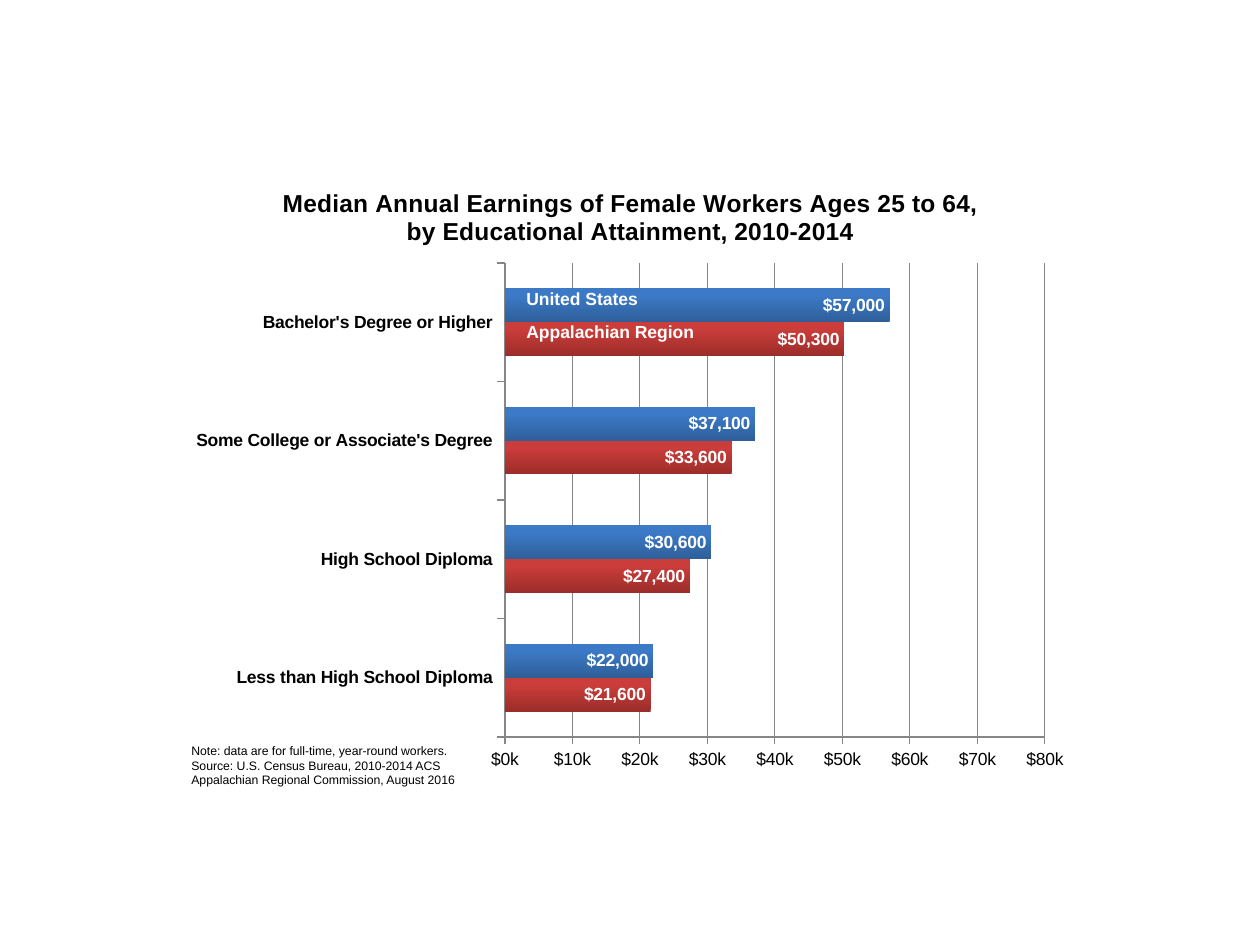
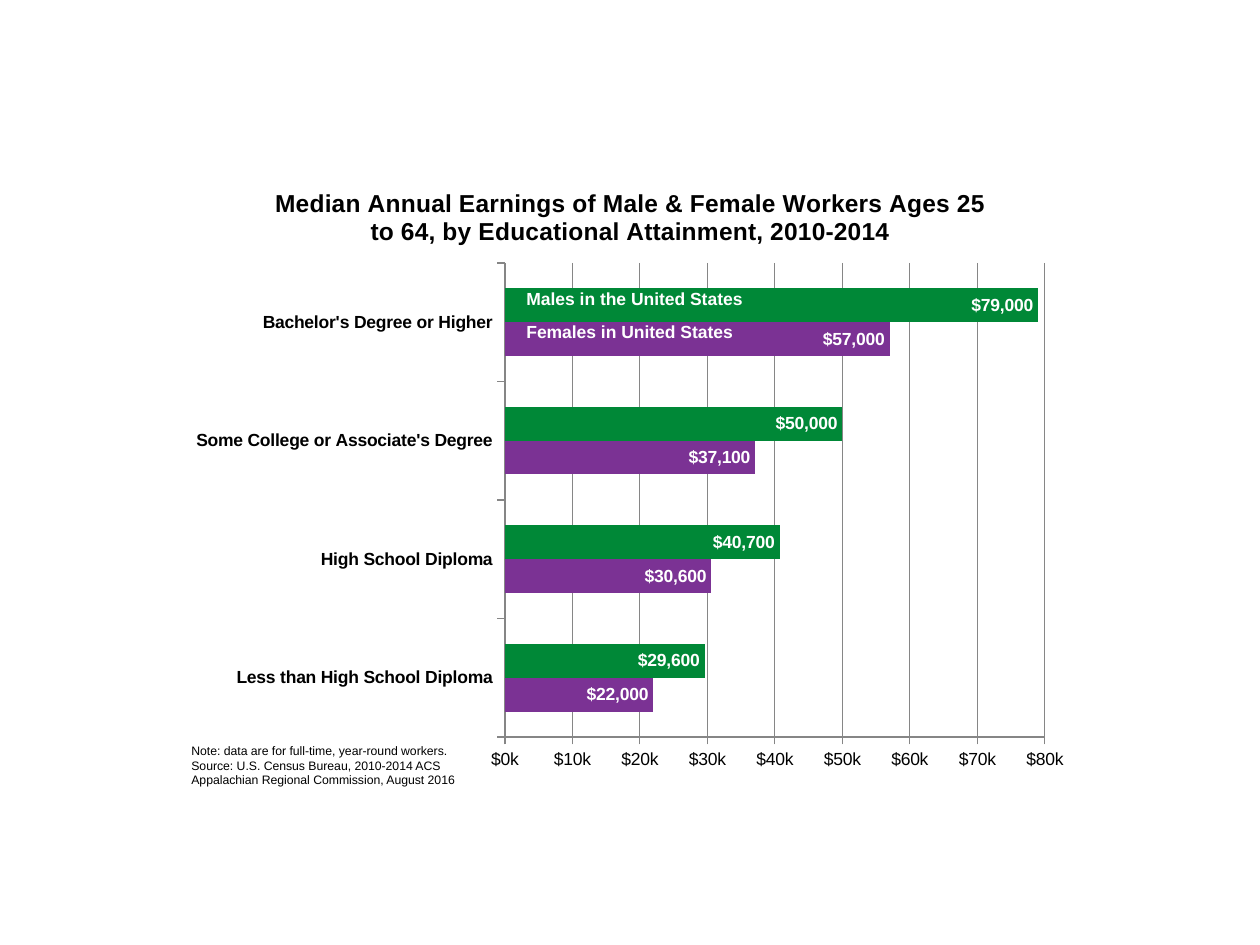
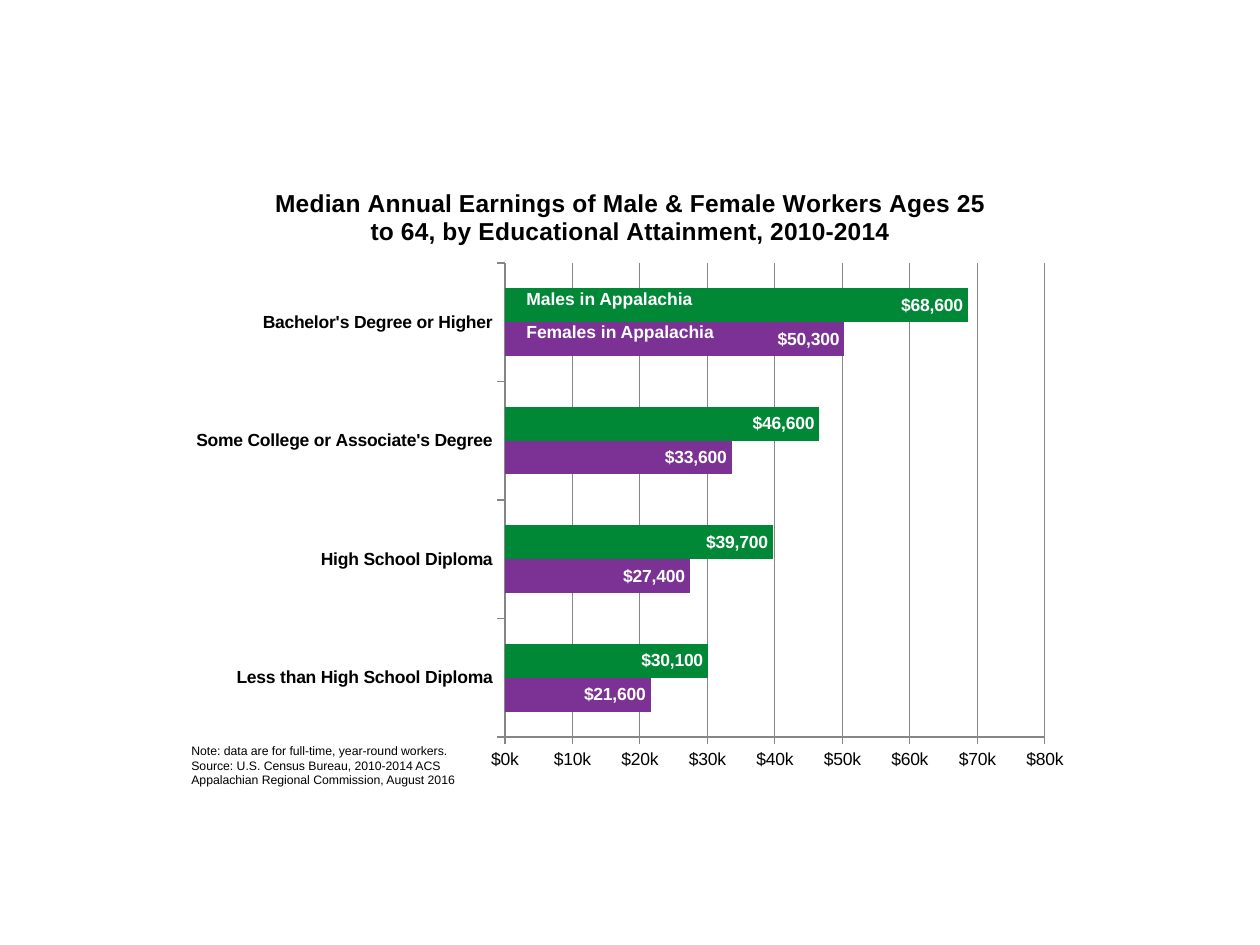
from dataclasses import dataclass

from lxml.etree import SubElement
from pptx import Presentation
from pptx.chart.data import CategoryChartData
from pptx.dml.color import RGBColor
from pptx.enum.chart import XL_CHART_TYPE, XL_LABEL_POSITION, XL_TICK_MARK
from pptx.oxml.ns import qn
from pptx.util import Emu, Pt

LEVELS = ["Less than High School Diploma", "High School Diploma",
          "Some College or Associate's Degree", "Bachelor's Degree or Higher"]
NOTES = ["Note: data are for full-time, year-round workers.",
         "Source: U.S. Census Bureau, 2010-2014 ACS",
         "Appalachian Regional Commission, August 2016"]
TITLE = "Median Annual Earnings of {} Workers Ages 25 to 64, by Educational Attainment, 2010-2014"
US_WOMEN = [22000, 30600, 37100, 57000]
APPALACHIAN_WOMEN = [21600, 27400, 33600, 50300]
SLIDES = [
    {"who": "Female", "bars": [
        ("Appalachian Region", APPALACHIAN_WOMEN, "red"),
        ("United States", US_WOMEN, "blue")]},
    {"who": "Male & Female", "bars": [
        ("Females in United States", US_WOMEN, "purple"),
        ("Males in the United States", [29600, 40700, 50000, 79000], "green")]},
    {"who": "Male & Female", "bars": [
        ("Females in Appalachia", APPALACHIAN_WOMEN, "purple"),
        ("Males in Appalachia", [30100, 39700, 46600, 68600], "green")]},
]


@dataclass(frozen=True)
class Theme:
    font: str = "Arial"
    text: str = "000000"
    label: str = "FFFFFF"
    grid: str = "868686"
    red: tuple = ("9B2D2A", "CB3D3A")
    blue: tuple = ("2E5F99", "3C7AC7")
    purple: tuple = ("7B3294",)
    green: tuple = ("008837",)
    title_size: int = 14
    body_size: int = 10
    note_size: int = 7


T = Theme()
CHART = (179, 164, 903, 617)
PLOT = (505, 263, 540, 474)
BAR_NAMES = [(514, 315, 252, 34), (514, 282, 252, 26)]
NOTE_BOX = (179, 737, 323, 63)


def px(n):
    return Emu(round(n * 914400 / 126))


def style(font, size, color=T.text, bold=False):
    for key, value in {"name": T.font, "size": Pt(size), "bold": bold}.items():
        setattr(font, key, value)
    font.color.rgb = RGBColor.from_string(color)


def add_text(s, box, lines, size, color=T.text, bold=False):
    tf = s.shapes.add_textbox(*map(px, box)).text_frame
    tf.word_wrap = True
    tf.text = "\n".join(lines)
    for p in tf.paragraphs:
        style(p.runs[0].font, size, color, bold)


def paint(fill, colors):
    if len(colors) == 1:
        fill.solid()
        fill.fore_color.rgb = RGBColor.from_string(colors[0])
        return
    fill.gradient()
    fill.gradient_angle = 90
    for stop, color, position in zip(fill.gradient_stops, colors, (0, 0.8)):
        stop.color.rgb = RGBColor.from_string(color)
        stop.position = position


def place_plot(chart):
    area = chart._chartSpace.chart.plotArea
    for old in area.findall(qn("c:layout")):
        area.remove(old)
    layout = SubElement(area, qn("c:layout"))
    area.insert(0, layout)
    manual = SubElement(layout, qn("c:manualLayout"))
    left, top, width, height = CHART
    x, y, w, h = PLOT
    parts = {"layoutTarget": "inner", "xMode": "edge", "yMode": "edge",
             "x": (x - left) / width, "y": (y - top) / height,
             "w": w / width, "h": h / height}
    for tag, value in parts.items():
        SubElement(manual, qn(f"c:{tag}")).set("val", str(value))


def style_axes(chart):
    cat, val = chart.category_axis, chart.value_axis
    cat.has_major_gridlines = False
    val.has_major_gridlines = True
    for key, value in {"minimum_scale": 0, "maximum_scale": 80000, "major_unit": 10000}.items():
        setattr(val, key, value)
    for axis in (cat, val):
        axis.major_tick_mark = XL_TICK_MARK.OUTSIDE
        axis.minor_tick_mark = XL_TICK_MARK.NONE
        style(axis.tick_labels.font, T.body_size, bold=axis is cat)
    val.tick_labels.number_format = '"$"#,##0,"k"'
    val.tick_labels.number_format_is_linked = False
    for part in (cat, val, val.major_gridlines):
        part.format.line.color.rgb = RGBColor.from_string(T.grid)
        part.format.line.width = Pt(0.75)


def add_earnings_chart(s, title, bars):
    data = CategoryChartData()
    data.categories = LEVELS
    for name, values, _ in bars:
        data.add_series(name, values)
    chart = s.shapes.add_chart(XL_CHART_TYPE.BAR_CLUSTERED, *map(px, CHART), data).chart
    style(chart.font, T.body_size)
    chart.has_legend = False
    chart.has_title = True
    tf = chart.chart_title.text_frame
    tf.text = title
    style(tf.paragraphs[0].runs[0].font, T.title_size, bold=True)
    chart.chart_title.include_in_layout = False
    style_axes(chart)
    place_plot(chart)
    plot = chart.plots[0]
    for key, value in {"gap_width": 150, "overlap": 0, "vary_by_categories": False}.items():
        setattr(plot, key, value)
    for series, (_, _, color) in zip(plot.series, bars):
        paint(series.format.fill, getattr(T, color))
        labels = series.data_labels
        formats = {"show_value": True, "position": XL_LABEL_POSITION.INSIDE_END,
                   "number_format": '"$"#,##0', "number_format_is_linked": False}
        for key, value in formats.items():
            setattr(labels, key, value)
        style(labels.font, T.body_size, T.label, True)


def main():
    prs = Presentation()
    prs.slide_width, prs.slide_height = px(1260), px(945)
    for content in SLIDES:
        s = prs.slides.add_slide(prs.slide_layouts[6])
        add_earnings_chart(s, TITLE.format(content["who"]), content["bars"])
        for box, (name, _, _) in zip(BAR_NAMES, content["bars"]):
            add_text(s, box, [name], T.body_size, T.label, True)
        add_text(s, NOTE_BOX, NOTES, T.note_size)
    prs.save("out.pptx")


if __name__ == "__main__":
    main()
